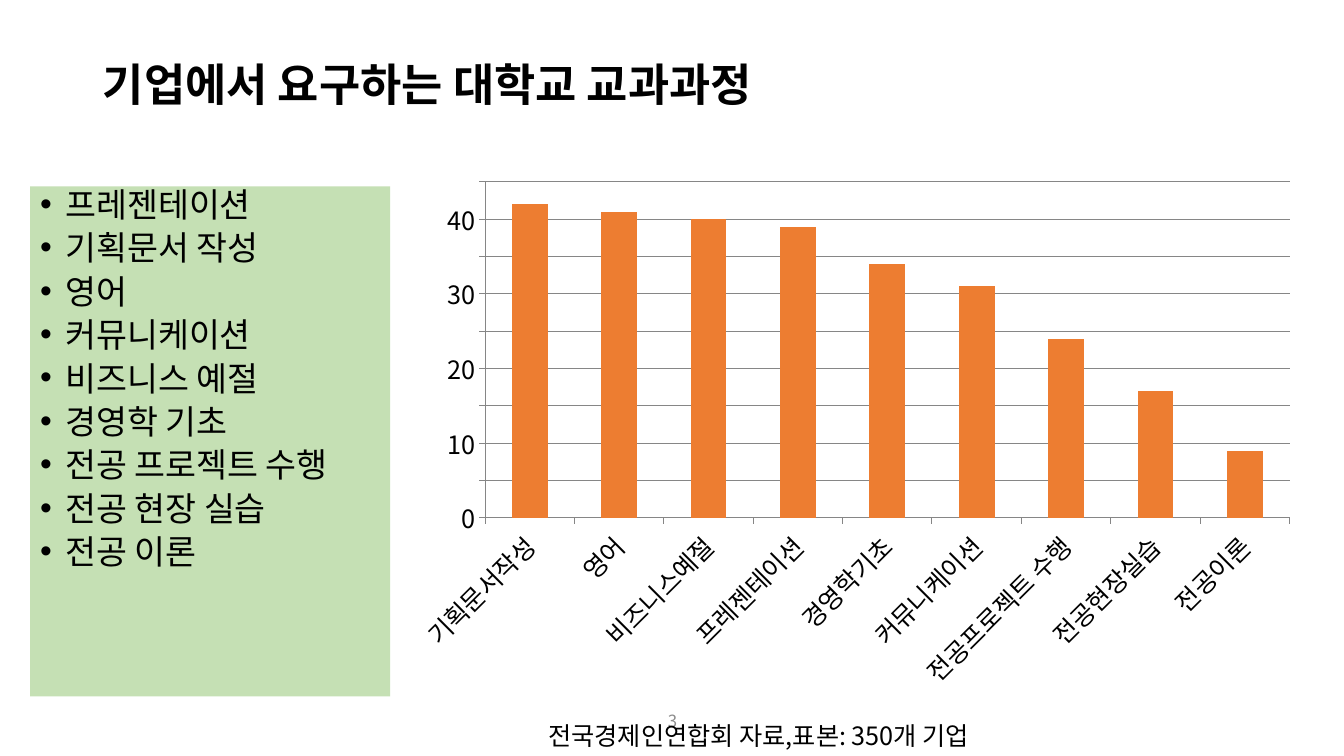
from dataclasses import dataclass

import pptx
import pptx.chart.data
import pptx.dml.color
import pptx.enum.chart
import pptx.enum.text
import pptx.oxml
import pptx.oxml.ns
import pptx.util
from lxml import etree
from pptx.util import Inches


@dataclass(frozen=True)
class Theme:
    font: str = "Noto Sans CJK KR"
    text: str = "000000"
    muted: str = "8C8C8C"
    panel: str = "C5E0B4"
    bar: str = "ED7D31"
    grid: str = "868686"
    title_size: int = 32
    list_size: int = 24
    label_size: int = 18
    number_size: int = 12


THEME = Theme()
ALIGN = pptx.enum.text.PP_ALIGN
ANCHOR = pptx.enum.text.MSO_ANCHOR

COURSES = [
    "프레젠테이션", "기획문서 작성", "영어", "커뮤니케이션", "비즈니스 예절",
    "경영학 기초", "전공 프로젝트 수행", "전공 현장 실습", "전공 이론",
]
DEMAND = {
    "기획문서작성": 42, "영어": 41, "비즈니스예절": 40, "프레젠테이션": 39,
    "경영학기초": 34, "커뮤니케이션": 31, "전공프로젝트 수행": 24,
    "전공현장실습": 17, "전공이론": 9,
}


def rgb(value):
    return pptx.dml.color.RGBColor.from_string(value)


def style_font(font, size, color=THEME.text, bold=False):
    font.name = THEME.font
    font.size = pptx.util.Pt(size)
    font.bold = bold
    font.color.rgb = rgb(color)


def style_paragraph(paragraph, size, color=THEME.text, bold=False, align=ALIGN.LEFT):
    paragraph.alignment = align
    for run in paragraph.runs:
        style_font(run.font, size, color, bold)
        east_asian = etree.Element(pptx.oxml.ns.qn("a:ea"), typeface=THEME.font)
        run.font._element.find(pptx.oxml.ns.qn("a:latin")).addnext(east_asian)


def add_title(slide, text):
    title = slide.shapes.title
    title.left, title.top = Inches(0.92), Inches(0.4)
    title.width, title.height = Inches(11.5), Inches(0.93)
    title.text_frame.text = text
    title.text_frame.vertical_anchor = ANCHOR.MIDDLE
    heading = title.text_frame.paragraphs[0]
    heading.line_spacing = 0.9
    style_paragraph(heading, THEME.title_size, bold=True)


def add_bullet(paragraph):
    properties = paragraph._p.get_or_add_pPr()
    properties.set("marL", str(Inches(0.25)))
    properties.set("indent", str(Inches(-0.25)))
    for tag, attribute, value in (("a:buFont", "typeface", "Arial"), ("a:buChar", "char", "•")):
        etree.SubElement(properties, pptx.oxml.ns.qn(tag)).set(attribute, value)


def add_course_list(slide, courses):
    panel = slide.shapes.add_textbox(Inches(0.3), Inches(1.85), Inches(3.57), Inches(5.06))
    panel.fill.solid()
    panel.fill.fore_color.rgb = rgb(THEME.panel)
    panel.text_frame.word_wrap = True
    panel.text_frame.text = "\n".join(courses)
    for course in panel.text_frame.paragraphs:
        course.line_spacing = 0.8
        course.space_before = pptx.util.Pt(8)
        style_paragraph(course, THEME.list_size)
        add_bullet(course)


def add_label(slide, text, box, size, color, align, anchor, wrap):
    label = slide.shapes.add_textbox(*(Inches(length) for length in box))
    label.text_frame.word_wrap = wrap
    label.text_frame.vertical_anchor = anchor
    label.text_frame.text = text
    style_paragraph(label.text_frame.paragraphs[0], size, color, align=align)


def style_axis(axis):
    axis.major_tick_mark = pptx.enum.chart.XL_TICK_MARK.OUTSIDE
    axis.format.line.color.rgb = rgb(THEME.grid)
    style_font(axis.tick_labels.font, THEME.label_size)


def add_demand_chart(slide, demand):
    data = pptx.chart.data.CategoryChartData()
    data.categories = list(demand)
    data.add_series("Series 1", list(demand.values()))
    chart = slide.shapes.add_chart(
        pptx.enum.chart.XL_CHART_TYPE.COLUMN_CLUSTERED,
        Inches(3.97), Inches(1.7), Inches(9), Inches(5.24), data,
    ).chart
    chart.has_legend = False
    chart.has_title = False
    style_font(chart.font, THEME.label_size)

    plot = chart.plots[0]
    plot.gap_width = 150
    plot.vary_by_categories = False
    bars = plot.series[0].format.fill
    bars.solid()
    bars.fore_color.rgb = rgb(THEME.bar)

    style_axis(chart.category_axis)
    chart.category_axis.tick_labels.font._element.getparent().getparent().getparent().find(
        pptx.oxml.ns.qn("a:bodyPr")
    ).set("rot", "-2700000")
    style_axis(chart.value_axis)
    chart.value_axis.minimum_scale = 0
    chart.value_axis.maximum_scale = 45
    chart.value_axis.major_unit = 5
    chart.value_axis.has_major_gridlines = True
    chart.value_axis.major_gridlines.format.line.color.rgb = rgb(THEME.grid)


def main():
    presentation = pptx.Presentation()
    presentation.slide_width = Inches(13.33)
    presentation.slide_height = Inches(7.5)
    slide = presentation.slides.add_slide(presentation.slide_layouts[5])

    add_course_list(slide, COURSES)
    add_label(slide, "3", (4.42, 6.95, 4.5, 0.4), THEME.number_size, THEME.muted,
              ALIGN.CENTER, ANCHOR.MIDDLE, True)
    add_title(slide, "기업에서 요구하는 대학교 교과과정")
    add_label(slide, "전국경제인연합회 자료,표본: 350개 기업", (4.93, 7.1, 4.78, 0.4),
              THEME.label_size, THEME.text, ALIGN.RIGHT, ANCHOR.TOP, False)
    add_demand_chart(slide, DEMAND)
    presentation.save("out.pptx")


if __name__ == "__main__":
    main()
